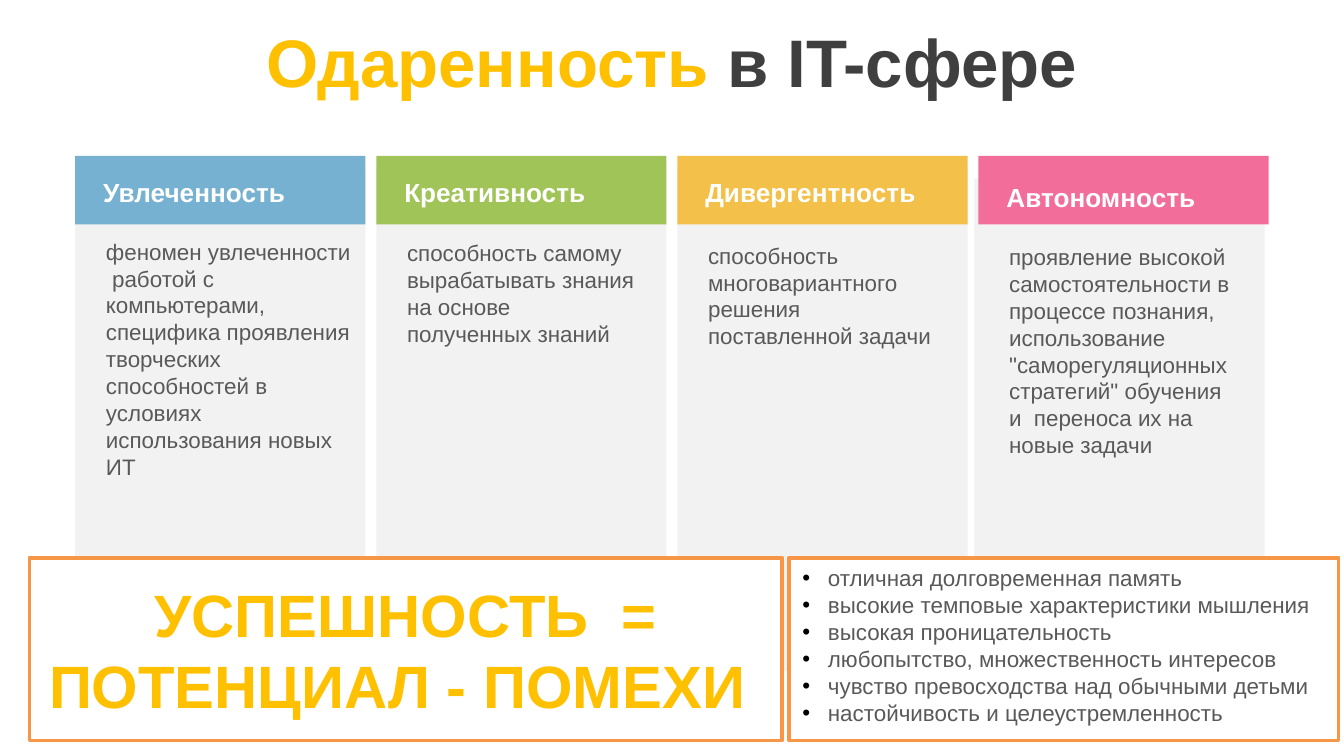
from dataclasses import dataclass

from lxml import etree
from pptx import Presentation
from pptx.dml.color import RGBColor
from pptx.enum.shapes import MSO_SHAPE
from pptx.enum.text import MSO_ANCHOR, MSO_AUTO_SIZE, PP_ALIGN
from pptx.oxml.ns import qn
from pptx.util import Inches, Pt

RECTANGLE = MSO_SHAPE.RECTANGLE
TOP, MIDDLE = MSO_ANCHOR.TOP, MSO_ANCHOR.MIDDLE
LEFT, CENTER = PP_ALIGN.LEFT, PP_ALIGN.CENTER
NO_AUTOFIT = MSO_AUTO_SIZE.NONE


@dataclass(frozen=True)
class Theme:
    font: str = "Arial"
    accent: str = "FFC000"
    dark: str = "3F3F3F"
    body: str = "595959"
    white: str = "FFFFFF"
    panel: str = "F2F2F2"
    border: str = "F79646"
    bullet: str = "000000"
    title_size: int = 36
    formula_size: int = 32
    heading_size: int = 14
    body_size: int = 12
    border_width: int = 2


@dataclass(frozen=True)
class Box:
    left: float
    top: float
    width: float
    height: float

    def lengths(self) -> tuple:
        return tuple(Inches(v) for v in (self.left, self.top, self.width, self.height))


@dataclass(frozen=True)
class Trait:
    heading: str
    description: str
    color: str
    description_top: float
    description_width: float = 1.91
    heading_top: float = 1.26
    panel_shift: tuple[float, float] = (0, 0)


THEME = Theme()
FIRST_LEFT, PITCH, COLUMN_WIDTH = 0.56, 2.24, 2.16

TRAITS = [
    Trait("Увлеченность",
          "феномен увлеченности  работой с компьютерами,  специфика проявления "
          "творческих способностей в условиях использования новых ИТ",
          "76B1D1", 1.72, description_width=2.03),
    Trait("Креативность",
          "способность самому вырабатывать знания на основе полученных знаний",
          "A0C458", 1.73),
    Trait("Дивергентность",
          "способность многовариантного решения поставленной задачи",
          "F3C04A", 1.75),
    Trait("Автономность",
          "проявление высокой самостоятельности в процессе познания,  использование "
          "\"саморегуляционных стратегий\" обучения и  переноса их на новые задачи",
          "F26D9A", 1.76, heading_top=1.3, panel_shift=(-0.03, 0.06)),
]

QUALITIES = [
    "отличная долговременная память",
    "высокие темповые характеристики мышления",
    "высокая проницательность",
    "любопытство, множественность интересов",
    "чувство превосходства над обычными детьми",
    "настойчивость и целеустремленность",
]


def add_text(paragraph, text: str, *, size: int = THEME.body_size,
             color: str = THEME.body, bold: bool = False, align=LEFT) -> None:
    paragraph.alignment = align
    run = paragraph.add_run()
    run.text = text
    run.font.name = THEME.font
    run.font.size = Pt(size)
    run.font.bold = bold
    run.font.color.rgb = RGBColor.from_string(color)


def prepare_frame(shape, anchor=TOP):
    frame = shape.text_frame
    frame.word_wrap = True
    frame.auto_size = NO_AUTOFIT
    frame.vertical_anchor = anchor
    return frame


def place(shape, box: Box) -> None:
    shape.left, shape.top, shape.width, shape.height = box.lengths()


def paint(shape, fill: str, border: str | None = None) -> None:
    shape.fill.solid()
    shape.fill.fore_color.rgb = RGBColor.from_string(fill)
    if border:
        shape.line.color.rgb = RGBColor.from_string(border)
        shape.line.width = Pt(THEME.border_width)
    else:
        shape.line.fill.background()


def add_rectangle(slide, box: Box, fill: str, border: str | None = None):
    rectangle = slide.shapes.add_shape(RECTANGLE, *box.lengths())
    rectangle.shadow.inherit = False
    paint(rectangle, fill, border)
    return rectangle


def add_label(slide, box: Box, text: str, **text_format) -> None:
    label = slide.shapes.add_textbox(*box.lengths())
    add_text(prepare_frame(label).paragraphs[0], text, **text_format)


def add_bullet(paragraph) -> None:
    properties = paragraph._p.get_or_add_pPr()
    indent = Inches(0.19)
    properties.set("marL", str(indent))
    properties.set("indent", str(-indent))
    color = etree.SubElement(properties, qn("a:buClr"))
    etree.SubElement(color, qn("a:srgbClr"), val=THEME.bullet)
    etree.SubElement(properties, qn("a:buFont"), typeface=THEME.font)
    etree.SubElement(properties, qn("a:buChar"), char="•")


def add_title(slide) -> None:
    title = slide.shapes.title
    place(title, Box(0, 0.03, 10, 0.85))
    heading = prepare_frame(title, MIDDLE).paragraphs[0]
    for text, color in (("Одаренность ", THEME.accent), ("в IT-сфере", THEME.dark)):
        add_text(heading, text, size=THEME.title_size, color=color, bold=True, align=CENTER)


def add_trait(slide, trait: Trait, left: float) -> None:
    shift_x, shift_y = trait.panel_shift
    add_rectangle(slide, Box(left + shift_x, 1.27 + shift_y, COLUMN_WIDTH, 3.72), THEME.panel)
    add_rectangle(slide, Box(left, 1.16, COLUMN_WIDTH, 0.51), trait.color)
    add_label(slide, Box(left + 0.13, trait.description_top, trait.description_width, 0.71),
              trait.description)
    add_label(slide, Box(left + 0.11, trait.heading_top, 1.94, 0.34), trait.heading,
              size=THEME.heading_size, color=THEME.white, bold=True)


def add_formula(slide) -> None:
    formula = add_rectangle(slide, Box(0.22, 4.15, 5.6, 1.36), THEME.white, THEME.border)
    add_text(prepare_frame(formula, MIDDLE).paragraphs[0], "УСПЕШНОСТЬ  = ПОТЕНЦИАЛ - ПОМЕХИ ",
             size=THEME.formula_size, color=THEME.accent, bold=True, align=CENTER)


def add_qualities(slide) -> None:
    """Fill the body placeholder and bring it in front of the columns."""
    qualities = slide.placeholders[1]
    place(qualities, Box(5.87, 4.15, 4.09, 1.36))
    paint(qualities, THEME.white, THEME.border)
    frame = prepare_frame(qualities)
    for index, quality in enumerate(QUALITIES):
        paragraph = frame.add_paragraph() if index else frame.paragraphs[0]
        paragraph.space_before = Pt(0)
        add_bullet(paragraph)
        add_text(paragraph, quality)
    qualities.element.getparent().append(qualities.element)


def main() -> None:
    presentation = Presentation()
    presentation.slide_width = Inches(10)
    presentation.slide_height = presentation.slide_width * 9 // 16
    slide = presentation.slides.add_slide(presentation.slide_layouts[1])
    add_title(slide)
    for index, trait in enumerate(TRAITS):
        add_trait(slide, trait, FIRST_LEFT + index * PITCH)
    add_formula(slide)
    add_qualities(slide)
    presentation.save("out.pptx")


if __name__ == "__main__":
    main()
